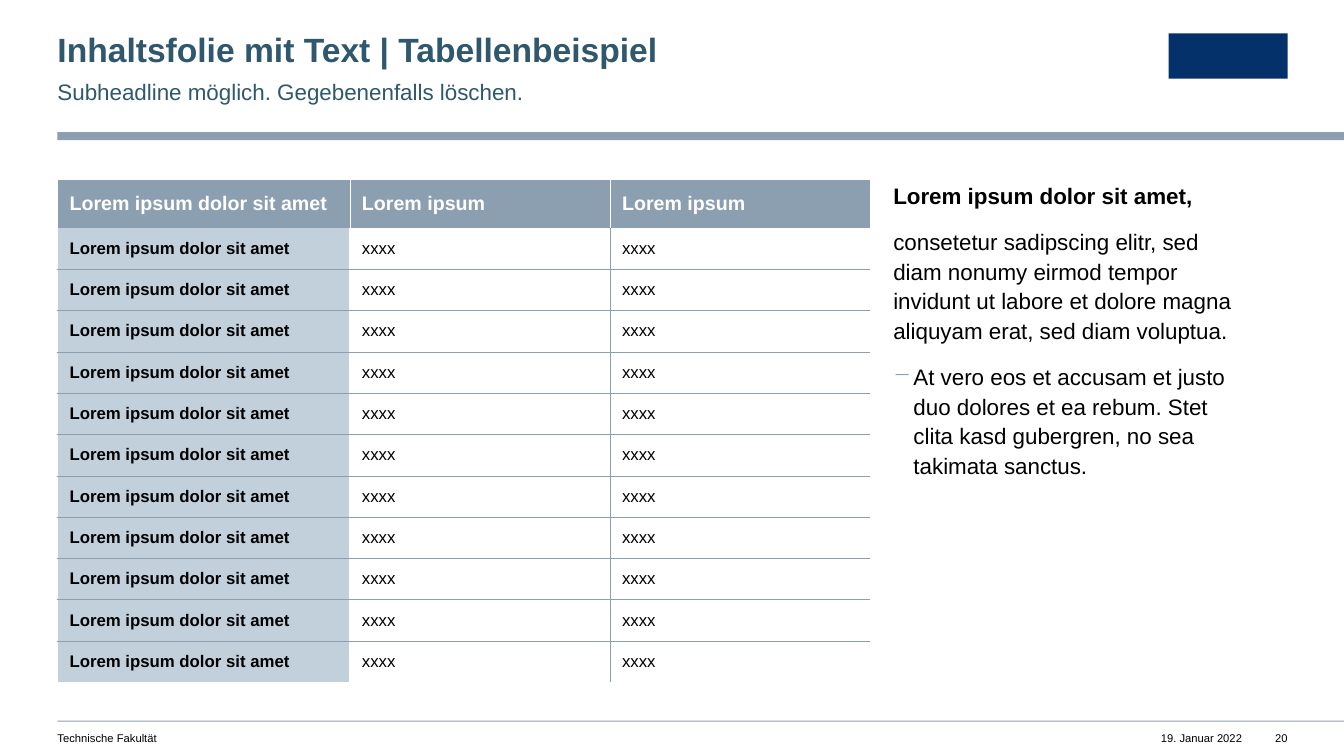
"""Build a content slide with a table, a text column and a footer."""
from dataclasses import dataclass

from lxml.etree import SubElement
from pptx import Presentation
from pptx.dml.color import RGBColor
from pptx.enum.shapes import MSO_SHAPE as Preset
from pptx.enum.text import MSO_ANCHOR as Anchor, PP_ALIGN as Align
from pptx.oxml.ns import qn
from pptx.util import Emu, Pt

EMU_PER_PX = 9144


@dataclass(frozen=True)
class Theme:
    font: str = "Arial"
    accent: str = "8C9FB1"
    pale: str = "C2D0DC"
    heading: str = "2F586E"
    navy: str = "04316A"
    black: str = "000000"
    white: str = "FFFFFF"
    title_size: int = 24
    body_size: int = 16
    header_size: int = 14
    cell_size: int = 12
    footer_size: int = 8


THEME = Theme()


@dataclass(frozen=True)
class Area:
    left: int
    top: int
    width: int
    height: int

    def emu(self) -> tuple:
        return tuple(px(side) for side in (self.left, self.top, self.width, self.height))


@dataclass(frozen=True)
class Style:
    size: int
    color: str = THEME.black
    bold: bool = False


@dataclass(frozen=True)
class Para:
    text: str
    style: Style
    align: Align = Align.LEFT
    line_spacing: float = 1.0
    space_after: int = 0
    bullet: str = ""


@dataclass(frozen=True)
class TextBlock:
    area: Area
    paras: tuple
    right_inset: int = 0


@dataclass(frozen=True)
class Bar:
    area: Area
    color: str


@dataclass(frozen=True)
class Border:
    side: str
    color: str
    points: float


SMALL = Style(THEME.footer_size)
BODY = Style(THEME.body_size)
BODY_BOLD = Style(THEME.body_size, bold=True)
SUBHEAD = Style(THEME.body_size, THEME.heading)
TITLE = Style(THEME.title_size, THEME.heading, True)
HEADER_CELL = Style(THEME.header_size, THEME.white, True)
LABEL_CELL = Style(THEME.cell_size, bold=True)
VALUE_CELL = Style(THEME.cell_size)

BARS = (
    Bar(Area(57, 131, 1276, 8), THEME.accent),
    Bar(Area(57, 715, 1276, 1), THEME.accent),
    Bar(Area(1159, 33, 118, 45), THEME.navy),
)


def body_para(text: str, style: Style, bullet: str = "") -> Para:
    return Para(text, style, line_spacing=1.1, space_after=12, bullet=bullet)


BLOCKS = (
    TextBlock(Area(57, 33, 749, 36),
              (Para("Inhaltsfolie mit Text | Tabellenbeispiel", TITLE, line_spacing=0.9),)),
    TextBlock(Area(57, 75, 749, 27),
              (body_para("Subheadline möglich. Gegebenenfalls löschen.", SUBHEAD),), 39),
    TextBlock(Area(886, 178, 391, 500), (
        body_para("Lorem ipsum dolor sit amet,", BODY_BOLD),
        body_para("consetetur sadipscing elitr, sed diam nonumy eirmod tempor invidunt "
                  "ut labore et dolore magna aliquyam erat, sed diam voluptua.", BODY),
        body_para("At vero eos et accusam et justo duo dolores et ea rebum. Stet clita "
                  "kasd gubergren, no sea takimata sanctus.", BODY, "−"),
    ), 39),
    TextBlock(Area(57, 726, 598, 13), (Para("Technische Fakultät", SMALL),)),
    TextBlock(Area(1139, 726, 93, 13), (Para("19. Januar 2022", SMALL, Align.RIGHT),)),
    TextBlock(Area(1256, 726, 21, 13), (Para("20", SMALL, Align.RIGHT),)),
)

TABLE_AREA = Area(57, 178, 806, 499)
COLUMN_WIDTHS = (290, 258, 258)
HEADER_HEIGHT, ROW_HEIGHT = 48, 41
TABLE_ROWS = (
    ("Lorem ipsum dolor sit amet", "Lorem ipsum", "Lorem ipsum"),
    *(("Lorem ipsum dolor sit amet", "xxxx", "xxxx"),) * 11,
)
PLAIN_TABLE_STYLE = "{2D5ABB26-0587-4C30-8999-92F81FD0307C}"


def px(length: int) -> Emu:
    return Emu(length * EMU_PER_PX)


def add_span(para, text: str, style: Style) -> None:
    span = para.add_run()
    span.text = text
    span.font.name = THEME.font
    span.font.size = Pt(style.size)
    span.font.bold = style.bold
    span.font.color.rgb = RGBColor.from_string(style.color)


def add_bullet(para, mark: str) -> None:
    properties = para._p.get_or_add_pPr()
    properties.set("marL", str(px(20)))
    properties.set("indent", str(-px(20)))
    color = SubElement(properties, qn("a:buClr"))
    SubElement(color, qn("a:srgbClr"), val=THEME.accent)
    SubElement(properties, qn("a:buChar"), char=mark)


def draw_bar(page, bar: Bar) -> None:
    shape = page.shapes.add_shape(Preset.RECTANGLE, *bar.area.emu())
    shape.shadow.inherit = False
    shape.fill.solid()
    shape.fill.fore_color.rgb = RGBColor.from_string(bar.color)
    shape.line.fill.background()


def draw_text(page, block: TextBlock) -> None:
    frame = page.shapes.add_textbox(*block.area.emu()).text_frame
    frame.word_wrap = True
    frame.margin_left = frame.margin_top = frame.margin_bottom = 0
    frame.margin_right = px(block.right_inset)
    for index, entry in enumerate(block.paras):
        para = frame.add_paragraph() if index else frame.paragraphs[0]
        para.alignment = entry.align
        para.line_spacing = entry.line_spacing
        para.space_after = Pt(entry.space_after)
        if entry.bullet:
            add_bullet(para, entry.bullet)
        add_span(para, entry.text, entry.style)


def cell_borders(row: int, column: int) -> list:
    inner = Border("", THEME.accent, 0.25) if row else Border("", THEME.white, 0.5)
    edge = Border("", THEME.white, 1)
    left = inner if column == 2 or not row and column else edge
    right = edge if row and column == 0 else inner
    borders = [Border("L", left.color, left.points)]
    if column < len(COLUMN_WIDTHS) - 1:
        borders.append(Border("R", right.color, right.points))
    if row != 1:
        top = inner if row else edge
        borders.append(Border("T", top.color, top.points))
    if 0 < row < len(TABLE_ROWS) - 1:
        borders.append(Border("B", inner.color, inner.points))
    return borders


def add_border(cell, border: Border) -> None:
    properties = cell._tc.get_or_add_tcPr()
    line = SubElement(properties, qn(f"a:ln{border.side}"), w=str(Pt(border.points)))
    SubElement(SubElement(line, qn("a:solidFill")), qn("a:srgbClr"), val=border.color)


def draw_cell(cell, row: int, column: int) -> None:
    cell.margin_left = cell.margin_right = px(12)
    cell.margin_top = cell.margin_bottom = px(4)
    cell.vertical_anchor = Anchor.MIDDLE
    for border in cell_borders(row, column):
        add_border(cell, border)
    if row and column:
        cell.fill.background()
    else:
        cell.fill.solid()
        cell.fill.fore_color.rgb = RGBColor.from_string(THEME.pale if row else THEME.accent)
    style = HEADER_CELL if not row else VALUE_CELL if column else LABEL_CELL
    add_span(cell.text_frame.paragraphs[0], TABLE_ROWS[row][column], style)


def draw_table(page) -> None:
    size = len(TABLE_ROWS), len(COLUMN_WIDTHS)
    table = page.shapes.add_table(*size, *TABLE_AREA.emu()).table
    table.horz_banding = False
    table._tbl.tblPr.find(qn("a:tableStyleId")).text = PLAIN_TABLE_STYLE
    for column, width in enumerate(COLUMN_WIDTHS):
        table.columns[column].width = px(width)
    for row in range(len(TABLE_ROWS)):
        table.rows[row].height = px(ROW_HEIGHT if row else HEADER_HEIGHT)
        for column in range(len(COLUMN_WIDTHS)):
            draw_cell(table.cell(row, column), row, column)


def main() -> None:
    deck = Presentation()
    deck.slide_width, deck.slide_height = px(1333), px(750)
    page = deck.slides.add_slide(deck.slide_layouts[6])
    for bar in BARS:
        draw_bar(page, bar)
    for block in BLOCKS:
        draw_text(page, block)
    draw_table(page)
    deck.save("out.pptx")


if __name__ == "__main__":
    main()
